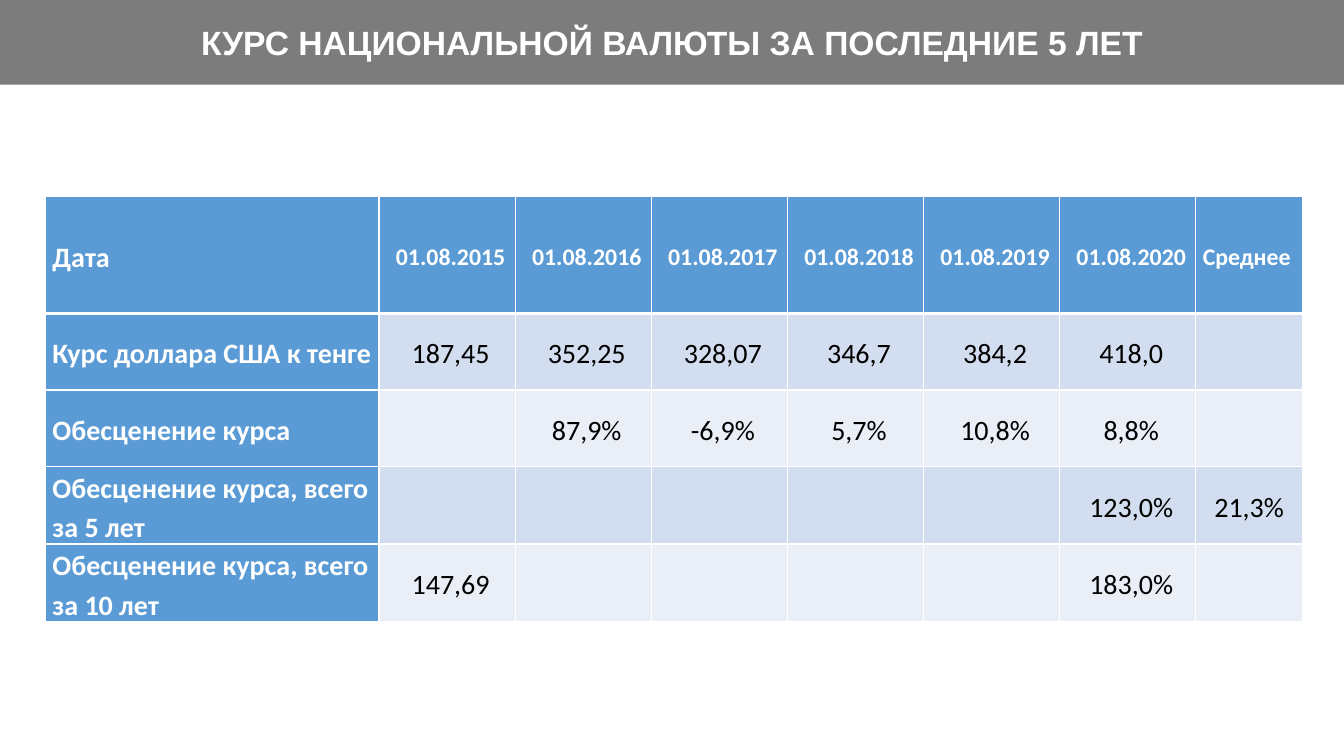
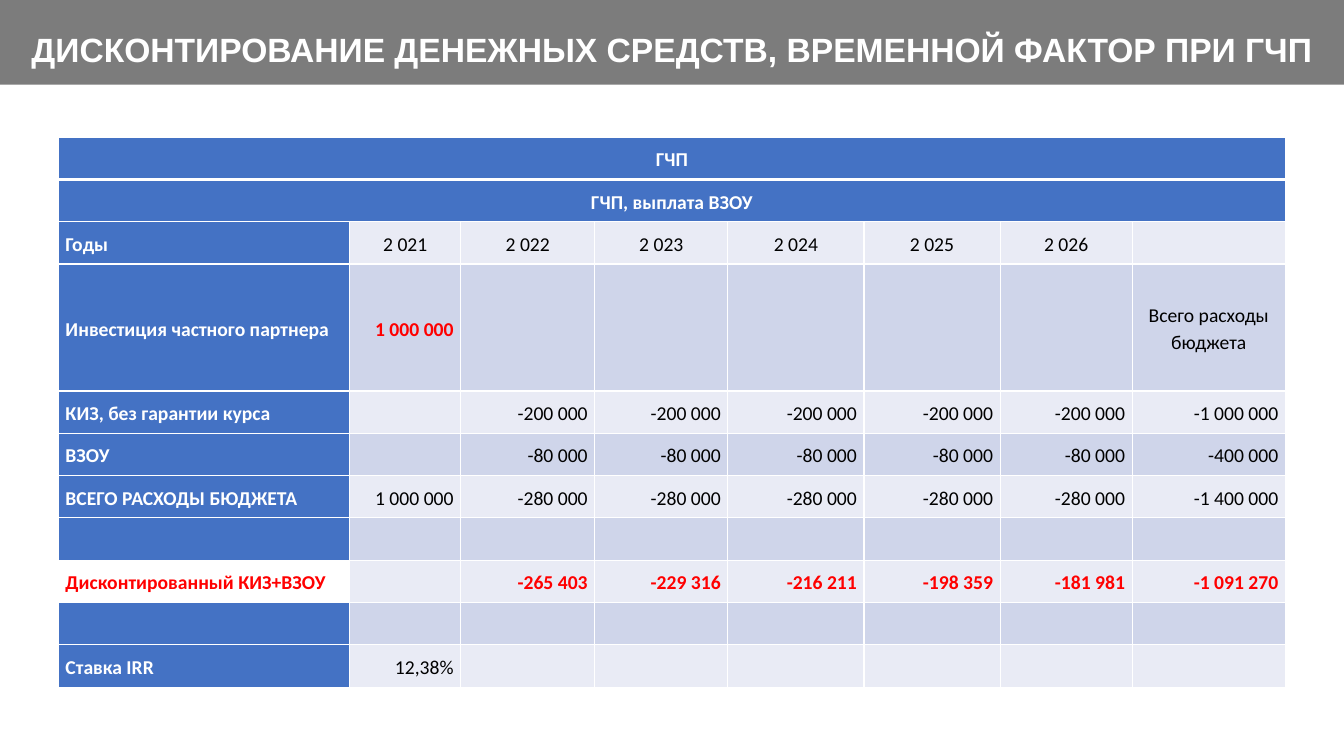
from lxml.etree import SubElement
from pptx import Presentation
from pptx.dml.color import RGBColor
from pptx.enum.shapes import MSO_SHAPE as Shape
from pptx.enum.text import MSO_ANCHOR as Anchor, PP_ALIGN as Align
from pptx.oxml.ns import qn
from pptx.util import Inches, Pt

WHITE = RGBColor(0xFF, 0xFF, 0xFF)
BLACK = RGBColor(0, 0, 0)
RED = RGBColor(0xFF, 0, 0)
BAND_GRAY = RGBColor(0x7C, 0x7C, 0x7C)
SKY = RGBColor(0x5B, 0x9B, 0xD5)
SKY_BANDS = RGBColor(0xD2, 0xDE, 0xEF), RGBColor(0xEA, 0xEF, 0xF7)
BLUE = RGBColor(0x44, 0x72, 0xC4)
BLUE_BANDS = RGBColor(0xCF, 0xD5, 0xEA), RGBColor(0xE9, 0xEB, 0xF5)

SLIDE_WIDTH, SLIDE_HEIGHT = 13.33, 7.5
BAND_HEIGHT = 0.84
CELL_INSET = 0.07

RATE_TITLE = "КУРС НАЦИОНАЛЬНОЙ ВАЛЮТЫ ЗА ПОСЛЕДНИЕ 5 ЛЕТ"
RATE_COLUMNS = [3.31] + [1.35] * 6 + [1.06]
RATE_HEIGHTS = [1.16] + [0.76] * 4
RATE_ROWS = [
    ["Дата"] + [f"01.08.{year}" for year in range(2015, 2021)] + ["Среднее"],
    ["Курс доллара США к тенге", "187,45", "352,25", "328,07", "346,7", "384,2", "418,0", ""],
    ["Обесценение курса", "", "87,9%", "-6,9%", "5,7%", "10,8%", "8,8%", ""],
    ["Обесценение курса, всего за 5 лет", "", "", "", "", "", "123,0%", "21,3%"],
    ["Обесценение курса, всего за 10 лет", "147,69", "", "", "", "", "183,0%", ""],
]

PPP_TITLE = "ДИСКОНТИРОВАНИЕ ДЕНЕЖНЫХ СРЕДСТВ, ВРЕМЕННОЙ ФАКТОР ПРИ ГЧП"
PPP_COLUMNS = [2.89, 1.1, 1.33, 1.32, 1.35, 1.35, 1.31, 1.52]
PPP_HEIGHTS = [0.42] * 3 + [1.26] + [0.42] * 7
EMPTY_ROW = [""] * 8
PPP_ROWS = [
    ["ГЧП"] + [""] * 7,
    ["ГЧП, выплата ВЗОУ"] + [""] * 7,
    ["Годы", "2 021", "2 022", "2 023", "2 024", "2 025", "2 026", ""],
    ["Инвестиция частного партнера", "1 000 000"] + [""] * 5 + ["Всего расходы бюджета"],
    ["КИЗ, без гарантии курса", ""] + ["-200 000"] * 5 + ["-1 000 000"],
    ["ВЗОУ", ""] + ["-80 000"] * 5 + ["-400 000"],
    ["ВСЕГО РАСХОДЫ БЮДЖЕТА", "1 000 000"] + ["-280 000"] * 5 + ["-1 400 000"],
    EMPTY_ROW,
    ["Дисконтированный КИЗ+ВЗОУ", "", "-265 403", "-229 316", "-216 211", "-198 359",
     "-181 981", "-1 091 270"],
    EMPTY_ROW,
    ["Ставка IRR", "12,38%"] + [""] * 6,
]
MERGED_ROWS = 2
YEARS_ROW, INVESTMENT_ROW, DISCOUNTED_ROW = 2, 3, 8


def write(frame, text, size, color=WHITE, bold=True, font="Calibri",
          align=Align.LEFT, indent=0, space_after=10):
    frame.word_wrap = True
    paragraph = frame.paragraphs[0]
    paragraph.alignment = align
    paragraph.line_spacing = 1.15
    paragraph.space_after = Pt(space_after)
    if indent:
        paragraph._p.get_or_add_pPr().set("indent", str(Inches(indent)))
    run = paragraph.add_run()
    run.text = text
    run.font.name, run.font.size = font, Pt(size)
    run.font.bold, run.font.color.rgb = bold, color


def add_titled_slide(deck, title, left, top):
    slide = deck.slides.add_slide(deck.slide_layouts[6])
    band = slide.shapes.add_shape(Shape.RECTANGLE, 0, 0, deck.slide_width, Inches(BAND_HEIGHT))
    band.shadow.inherit = False
    band.fill.solid()
    band.fill.fore_color.rgb = BAND_GRAY
    band.line.fill.background()
    heading = slide.shapes.add_textbox(Inches(left), Inches(top),
                                       Inches(SLIDE_WIDTH - 2 * left), Inches(0.54))
    write(heading.text_frame, title, 24, font="Arial", align=Align.CENTER)
    return slide


def add_borders(cell, row):
    widths = {"L": 1, "R": 1, "T": 3 if row == 1 else 1, "B": 3 if row == 0 else 1}
    properties = cell._tc.get_or_add_tcPr()
    for side, width in widths.items():
        line = SubElement(properties, qn(f"a:ln{side}"), w=str(Pt(width)))
        SubElement(SubElement(line, qn("a:solidFill")), qn("a:srgbClr"), val=str(WHITE))


def add_grid(slide, left, top, columns, heights, rows, cell_style, merged_rows=0):
    table = slide.shapes.add_table(len(rows), len(columns), Inches(left), Inches(top),
                                   Inches(sum(columns)), Inches(sum(heights))).table
    table.first_row = table.horz_banding = False
    for column, width in zip(table.columns, columns):
        column.width = Inches(width)
    for table_row, height in zip(table.rows, heights):
        table_row.height = Inches(height)
    for r, texts in enumerate(rows):
        for c, text in enumerate(texts):
            cell = table.cell(r, c)
            cell.margin_left = cell.margin_right = Inches(CELL_INSET)
            cell.margin_top = cell.margin_bottom = 0
            cell.vertical_anchor = Anchor.MIDDLE
            add_borders(cell, r)
            fill, style = cell_style(r, c)
            cell.fill.solid()
            cell.fill.fore_color.rgb = fill
            if text:
                write(cell.text_frame, text, **style)
    for r in range(merged_rows):
        table.cell(r, 0).merge(table.cell(r, len(columns) - 1))


def rate_style(r, c):
    last = len(RATE_COLUMNS) - 1
    heading = r == 0 or c == 0
    average_heading = r == 0 and c == last
    style = dict(
        size=17 if r == 0 and c else 20,
        color=WHITE if heading else BLACK,
        bold=heading,
        align=Align.LEFT if c == 0 or average_heading else Align.CENTER,
        indent=CELL_INSET if 0 < c < last else 0,
        space_after=0 if average_heading else 10,
    )
    return SKY if heading else SKY_BANDS[(r - 1) % 2], style


def ppp_style(r, c):
    heading = r < MERGED_ROWS or c == 0
    red = r == DISCOUNTED_ROW or (r, c) == (INVESTMENT_ROW, 1)
    total_heading = (r, c) == (INVESTMENT_ROW, len(PPP_COLUMNS) - 1)
    if r < MERGED_ROWS or total_heading or (r == YEARS_ROW and c):
        align = Align.CENTER
    else:
        align = Align.RIGHT if c else Align.LEFT
    style = dict(size=14, color=RED if red else WHITE if heading else BLACK,
                 bold=heading or red, align=align)
    if heading:
        return WHITE if r == DISCOUNTED_ROW else BLUE, style
    return BLUE_BANDS[(r - 1) % 2], style


def main():
    deck = Presentation()
    deck.slide_width, deck.slide_height = Inches(SLIDE_WIDTH), Inches(SLIDE_HEIGHT)
    rates = add_titled_slide(deck, RATE_TITLE, 1.76, 0.11)
    add_grid(rates, 0.45, 1.95, RATE_COLUMNS, RATE_HEIGHTS, RATE_ROWS, rate_style)
    partnership = add_titled_slide(deck, PPP_TITLE, 0.18, 0.18)
    add_grid(partnership, 0.58, 1.36, PPP_COLUMNS, PPP_HEIGHTS, PPP_ROWS, ppp_style, MERGED_ROWS)
    deck.save("out.pptx")


if __name__ == "__main__":
    main()
